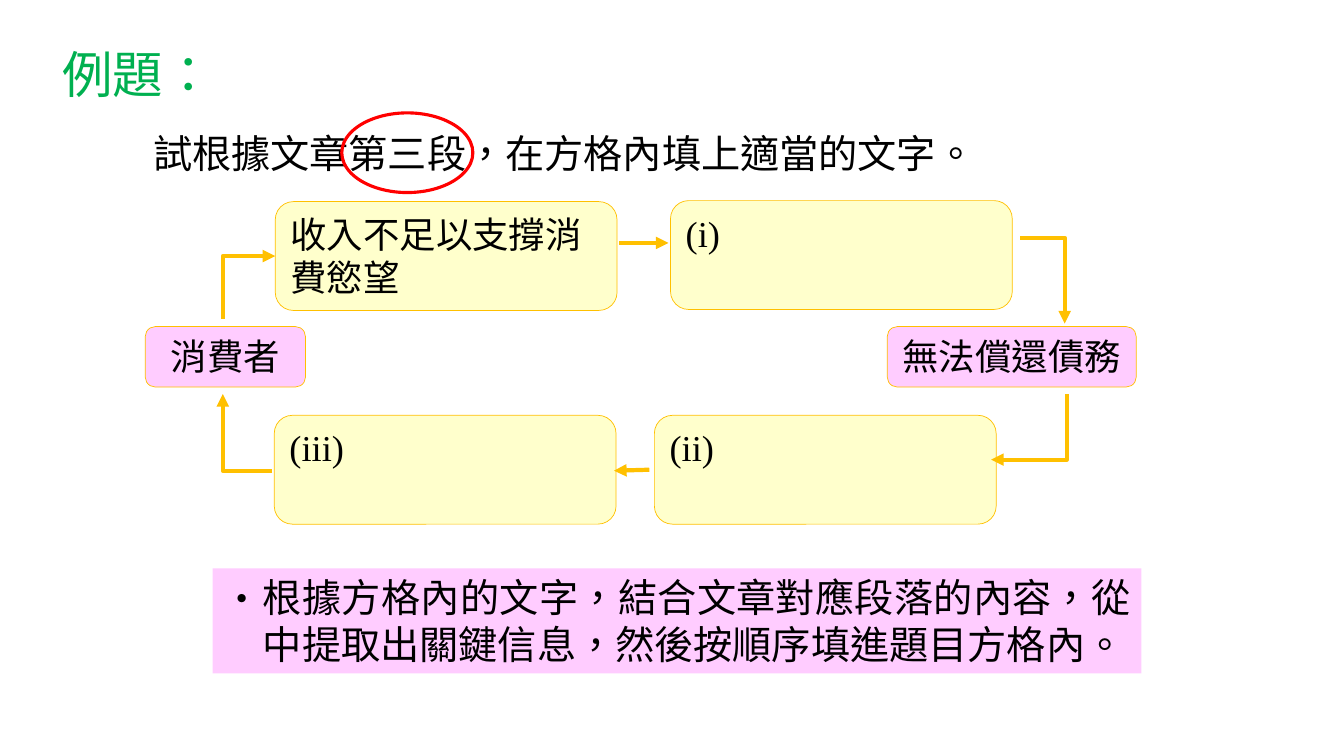
import pptx
import pptx.dml.color
import pptx.enum.lang
import pptx.enum.shapes
import pptx.enum.text
import pptx.oxml.ns
import pptx.util
from lxml import etree

Inches = pptx.util.Inches
Pt = pptx.util.Pt
qn = pptx.oxml.ns.qn
SHAPE = pptx.enum.shapes.MSO_SHAPE
CONNECTOR = pptx.enum.shapes.MSO_CONNECTOR
ALIGN = pptx.enum.text.PP_ALIGN

CJK = "Noto Sans CJK SC"
GREEN, RED, BLACK = "00B050", "FF0000", "000000"
YELLOW, PINK, GOLD = "FFFFCC", "FFCCFF", "FFC000"


def color(hex_code):
    return pptx.dml.color.RGBColor.from_string(hex_code)


def write(shape, text, size, ink=BLACK, font=CJK, align=ALIGN.LEFT):
    frame = shape.text_frame
    frame.text = text
    frame.word_wrap = True
    frame.auto_size = pptx.enum.text.MSO_AUTO_SIZE.NONE
    frame.vertical_anchor = pptx.enum.text.MSO_ANCHOR.TOP
    paragraph = frame.paragraphs[0]
    paragraph.alignment = align
    run = paragraph.runs[0]
    run.font.size = Pt(size)
    run.font.name = font
    run.font.color.rgb = color(ink)
    run.font.language_id = pptx.enum.lang.MSO_LANGUAGE_ID.TRADITIONAL_CHINESE
    latin = run.font._element.find(qn("a:latin"))
    east_asian = etree.Element(qn("a:ea"), typeface=CJK)
    latin.addnext(east_asian)
    return paragraph


def add_panel(slide, kind, box, fill=None, line=None, weight=0.5):
    panel = slide.shapes.add_shape(kind, *map(Inches, box))
    panel.shadow.inherit = False
    if fill:
        panel.fill.solid()
        panel.fill.fore_color.rgb = color(fill)
    else:
        panel.fill.background()
    if line:
        panel.line.color.rgb = color(line)
        panel.line.width = Pt(weight)
    else:
        panel.line.fill.background()
    return panel


def add_arrow(slide, start, end, bend=None):
    kind = CONNECTOR.ELBOW if bend else CONNECTOR.STRAIGHT
    arrow = slide.shapes.add_connector(kind, *map(Inches, start + end))
    arrow.line.color.rgb = color(GOLD)
    arrow.line.width = Pt(3)
    properties = arrow._element.spPr
    geometry = properties.find(qn("a:prstGeom"))
    if bend == "across first":
        geometry.set("prst", "bentConnector2")
    elif bend == "upright first":
        guides = geometry.find(qn("a:avLst"))
        etree.SubElement(guides, qn("a:gd"), name="adj1", fmla="val 0")
    etree.SubElement(properties.find(qn("a:ln")), qn("a:tailEnd"), type="triangle")
    etree.SubElement(properties, qn("a:effectLst"))


def build_title(slide, box):
    title = slide.shapes.title
    title.left, title.top, title.width, title.height = map(Inches, box)
    write(title, "例題：", 36, GREEN)
    title.text_frame.word_wrap = False


def build_question(slide, box):
    left, top, width, height = box
    question = slide.shapes.add_textbox(*map(Inches, box))
    write(question, "試根據文章第三段，在方格內填上適當的文字。", 28)
    add_panel(slide, SHAPE.OVAL, (left + 1.97, top - 0.11, 1.3, 0.79),
              line=RED, weight=2.25)


def build_cycle(slide, box):
    left, top, width, height = box
    step_width, step_height, end_height = 3.39, 1.08, 0.6
    lower = height - step_height
    steps = [
        ("收入不足以支撐消費慾望", CJK, 1.29, 0.01),
        ("(i)", "Times New Roman", 5.21, 0),
        ("(ii)", "Times New Roman", 5.05, lower),
        ("(iii)", "Times New Roman", 1.28, lower),
    ]
    for text, font, x, y in steps:
        step = add_panel(slide, SHAPE.ROUNDED_RECTANGLE,
                         (left + x, top + y, step_width, step_height), YELLOW, GOLD)
        write(step, text, 26, font=font)

    for text, x, end_width in [("消費者", 0, 1.59), ("無法償還債務", width - 2.47, 2.47)]:
        end = add_panel(slide, SHAPE.ROUNDED_RECTANGLE,
                        (left + x, top + 1.25, end_width, end_height), PINK, GOLD)
        write(end, text, 26, align=ALIGN.CENTER)

    arrows = [
        ((0.77, 1.17), (1.29, 0.55), "upright first"),
        ((4.7, 0.42), (5.19, 0.42), None),
        ((8.68, 0.37), (9.12, 1.22), "across first"),
        ((9.14, 1.92), (8.39, 2.57), "upright first"),
        ((5, 2.67), (4.65, 2.68), None),
        ((1.26, 2.68), (0.77, 1.92), "across first"),
    ]
    for start, end, bend in arrows:
        add_arrow(slide, (left + start[0], top + start[1]),
                  (left + end[0], top + end[1]), bend)


def build_note(slide, box):
    note = add_panel(slide, SHAPE.RECTANGLE, box, PINK)
    paragraph = write(
        note,
        "根據方格內的文字，結合文章對應段落的內容，從中提取出關鍵信息，然後按順序填進題目方格內。",
        28, font="Arial", align=ALIGN.JUSTIFY)
    properties = paragraph._p.get_or_add_pPr()
    properties.set("marL", str(Inches(0.4)))
    properties.set("indent", str(-Inches(0.4)))
    etree.SubElement(properties, qn("a:buFont"), typeface=CJK)
    etree.SubElement(properties, qn("a:buChar"), char="‧")


def main():
    deck = pptx.Presentation()
    deck.slide_width, deck.slide_height = Inches(13.33), Inches(7.5)
    slide = deck.slides.add_slide(deck.slide_layouts[5])
    build_title(slide, (0.52, 0.38, 1.72, 0.71))
    build_question(slide, (1.42, 1.23, 8.77, 0.57))
    build_cycle(slide, (1.44, 1.99, 9.83, 3.21))
    build_note(slide, (2.11, 5.64, 9.21, 1.04))
    deck.save("out.pptx")


if __name__ == "__main__":
    main()
